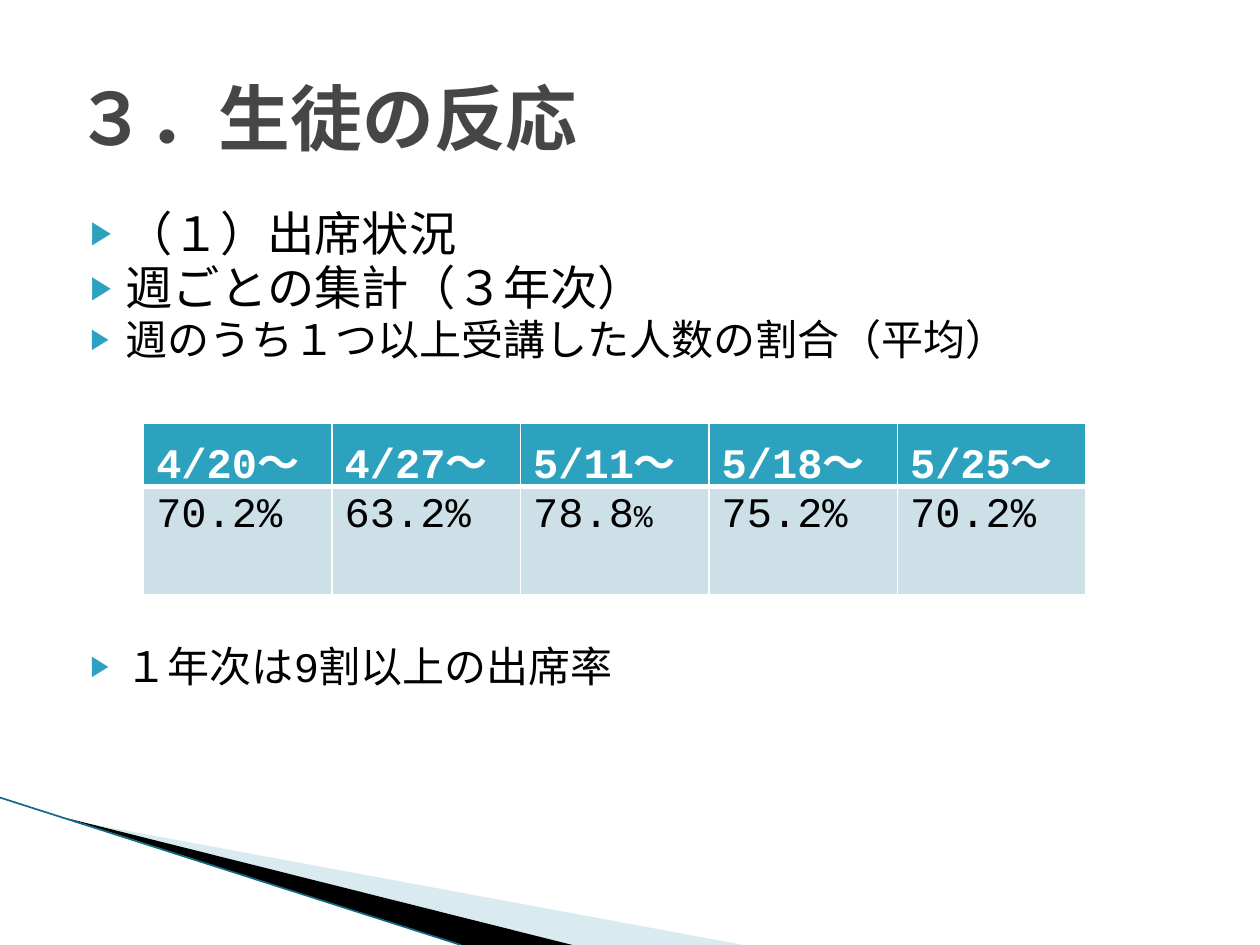
from lxml.etree import SubElement as Sub
from pptx import Presentation
from pptx.dml.color import RGBColor as Rgb
from pptx.enum.shapes import MSO_CONNECTOR as Conn
from pptx.enum.text import MSO_ANCHOR as Anchor
from pptx.oxml.ns import qn
from pptx.util import Inches as Inch, Pt

FONT = "Courier New"
HUE = {"head": "2DA2BF", "cell": "CDE0E8", "title": "464646", "ink": "000000",
       "white": "FFFFFF", "pale": "A0CBDC", "edge": "0F6C80"}
WIDE, HIGH = 10, 7.5
LIST = [("（１）出席状況", 27), ("週ごとの集計（３年次）", 27),
        ("週のうち１つ以上受講した人数の割合（平均）", 24)]
RATES = [("4/20～", ["70.2", "%"]), ("4/27～", ["63.2", "%"]),
         ("5/11～", ["78.8", "%"]), ("5/18～", ["75.2", "%"]),
         ("5/25～", ["70.2", "%"])]
SMALL = 2


def paint(fill, hue):
    """Fill with one solid colour."""
    fill.solid()
    fill.fore_color.rgb = Rgb.from_string(HUE[hue])


def write(para, text, size=24, hue="ink", bold=False):
    """Add one formatted run to a paragraph."""
    run = para.add_run()
    run.text = text
    font = run.font
    font.name, font.size, font.bold = FONT, Pt(size), bold
    font.color.rgb = Rgb.from_string(HUE[hue])


def frame(slide, box, anchor=Anchor.TOP):
    """Add a wrapping text box and return its frame."""
    area = slide.shapes.add_textbox(*map(Inch, box)).text_frame
    area.word_wrap, area.vertical_anchor = True, anchor
    return area


def mark(para):
    """Give a paragraph a hanging arrow bullet."""
    prop = para._p.get_or_add_pPr()
    prop.set("marL", str(Inch(0.4)))
    prop.set("indent", str(Inch(-0.28)))
    Sub(Sub(prop, qn("a:buClr")), qn("a:srgbClr"), val=HUE["head"])
    Sub(prop, qn("a:buSzPct"), val="68000")
    Sub(prop, qn("a:buFont"), typeface="Arial")
    Sub(prop, qn("a:buChar"), char="▶")


def title(slide, box, text):
    """Place the heading in its box."""
    area = frame(slide, box, Anchor.MIDDLE)
    write(area.paragraphs[0], text, size=41, hue="title", bold=True)


def points(slide, box, items):
    """Place a bulleted list in its box."""
    area = frame(slide, box)
    for num, (text, size) in enumerate(items):
        para = area.add_paragraph() if num else area.paragraphs[0]
        mark(para)
        para.line_spacing = 0.83
        if num:
            para.space_before = Pt(4)
        write(para, text, size=size)


def border(cell, **sides):
    """Draw white cell borders with the given point widths."""
    prop = cell._tc.get_or_add_tcPr()
    for side in "LRTB":
        line = Sub(prop, qn("a:ln" + side), w=str(Pt(sides.get(side, 1))))
        Sub(Sub(line, qn("a:solidFill")), qn("a:srgbClr"), val=HUE["white"])


def rates(slide, box, data):
    """Place the weekly attendance table in its box."""
    grid = slide.shapes.add_table(2, len(data), *map(Inch, box)).table
    grid.horz_banding = False
    for row, part in zip(grid.rows, (0.36, 0.64)):
        row.height = Inch(box[3] * part)
    for col, (week, rate) in enumerate(data):
        head, cell = grid.cell(0, col), grid.cell(1, col)
        border(head, B=3)
        border(cell, T=3)
        paint(head.fill, "head")
        paint(cell.fill, "cell")
        write(head.text_frame.paragraphs[0], week, hue="white", bold=True)
        para = cell.text_frame.paragraphs[0]
        if col == SMALL:
            write(para, rate[0])
            write(para, rate[1], size=18)
        else:
            write(para, "".join(rate))


def wedge(slide, box, dots, hue):
    """Draw a filled outline from shares of its box."""
    left, top, wide, high = box
    spots = [(Inch(left + x * wide), Inch(top + y * high)) for x, y in dots]
    pen = slide.shapes.build_freeform(*spots[0])
    pen.add_line_segments(spots[1:], close=True)
    shape = pen.convert_to_shape()
    shape.shadow.inherit = False
    paint(shape.fill, hue)
    shape.line.fill.background()
    return shape


def swoosh(slide, box):
    """Draw the corner wedges and their edge line in the box."""
    left, top, wide, high = box
    pale = wedge(slide, box, [(0.09, 0.15), (1, 1), (0.77, 1)], "pale")
    tint = pale.fill._xPr.find(qn("a:solidFill"))[0]
    Sub(tint, qn("a:alpha"), val="40000")
    wedge(slide, box, [(0.09, 0.14), (0.77, 1), (0.62, 1)], "ink")
    line = slide.shapes.add_connector(Conn.STRAIGHT, *map(Inch, (
        left, top, left + wide * 0.62, top + high)))
    line.line.color.rgb = Rgb.from_string(HUE["edge"])
    line.line.width = Pt(0.95)
    Sub(line._element.spPr, qn("a:effectLst"))


def main():
    """Build and save the slide."""
    deck = Presentation()
    deck.slide_width, deck.slide_height = Inch(WIDE), Inch(HIGH)
    slide = deck.slides.add_slide(deck.slide_layouts[6])
    edge, span = WIDE * 0.05, WIDE * 0.9
    swoosh(slide, (0, HIGH * 0.844, WIDE * 0.59, HIGH * 0.156))
    points(slide, (edge, HIGH * 0.22, span, HIGH * 0.21), LIST)
    points(slide, (edge, HIGH * 0.68, span, HIGH * 0.08),
           [("１年次は9割以上の出席率", 24)])
    title(slide, (edge, HIGH * 0.04, span, HIGH * 0.167), "３．生徒の反応")
    rates(slide, (WIDE * 0.114, HIGH * 0.448, WIDE * 0.748, HIGH * 0.18), RATES)
    deck.save("out.pptx")


if __name__ == "__main__":
    main()
